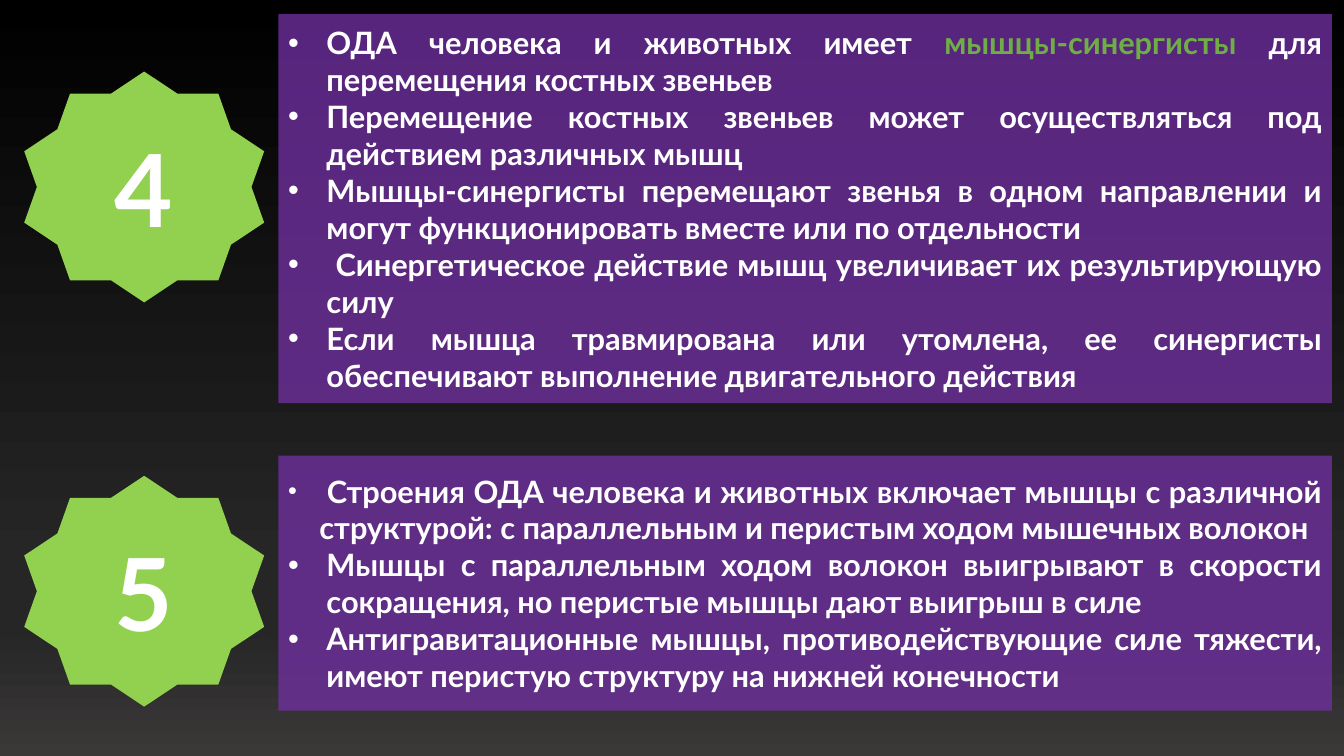
from dataclasses import dataclass

from lxml import etree
from pptx import Presentation
from pptx.dml.color import RGBColor
from pptx.enum import shapes, text
from pptx.oxml.ns import qn
from pptx.util import Inches, Pt


@dataclass(frozen=True)
class Theme:
    font: str = "Lato"
    serif: str = "Times New Roman"
    body: int = 22
    small: int = 18
    big: int = 72
    white: str = "FFFFFF"
    green: str = "70AD47"
    lime: str = "92D050"
    purple: str = "7030A0"
    alpha: int = 78
    stops: tuple = ((0, "000000"), (74, "262626"), (83, "262626"), (100, "3B3838"))


class Deck:
    def __init__(self, theme):
        self.theme = theme
        self.file = Presentation()
        self.file.slide_width = Inches(13.33)
        self.file.slide_height = Inches(7.5)
        self.slide = self.file.slides.add_slide(self.file.slide_layouts[6])

    def backdrop(self):
        fill = self.slide.background.fill
        fill.gradient()
        fill.gradient_angle = 270
        stops = next(self.slide.element.iter(qn("a:gsLst")))
        for stop in list(stops):
            stops.remove(stop)
        for place, color in self.theme.stops:
            stop = etree.SubElement(stops, qn("a:gs"), pos=str(place * 1000))
            etree.SubElement(stop, qn("a:srgbClr"), val=color)

    def shape(self, kind, box, color):
        shape = self.slide.shapes.add_shape(kind, *map(Inches, box))
        shape.shadow.inherit = False
        shape.fill.solid()
        shape.fill.fore_color.rgb = RGBColor.from_string(color)
        shape.line.fill.background()
        shape.text_frame.word_wrap = True
        shape.text_frame.vertical_anchor = text.MSO_ANCHOR.MIDDLE
        return shape

    def run(self, para, words, size, color=None, font=None, bold=True):
        run = para.add_run()
        run.text = words
        run.font.size = Pt(size)
        run.font.name = font or self.theme.font
        run.font.bold = bold
        run.font.color.rgb = RGBColor.from_string(color or self.theme.white)

    def bullet(self, para, indent):
        para.alignment = text.PP_ALIGN.JUSTIFY
        props = para._p.get_or_add_pPr()
        props.set("marL", str(Inches(indent)))
        props.set("indent", str(-Inches(indent)))
        etree.SubElement(props, qn("a:buFont"), typeface="Arial")
        etree.SubElement(props, qn("a:buChar"), char="•")

    def panel(self, top, height, items):
        box = (2.76, top, 10.45, height)
        shape = self.shape(shapes.MSO_SHAPE.FLOWCHART_PROCESS, box, self.theme.purple)
        color = next(shape.element.spPr.iter(qn("a:srgbClr")))
        etree.SubElement(color, qn("a:alpha"), val=str(self.theme.alpha * 1000))
        frame = shape.text_frame
        for i, (indent, runs) in enumerate(items):
            para = frame.add_paragraph() if i else frame.paragraphs[0]
            self.bullet(para, indent)
            for words, style in runs:
                self.run(para, words, **{"size": self.theme.body, **style})

    def star(self, top, digit):
        box = (0.24, top, 2.38, 2.29)
        shape = self.shape(shapes.MSO_SHAPE.STAR_10_POINT, box, self.theme.lime)
        para = shape.text_frame.paragraphs[0]
        para.alignment = text.PP_ALIGN.CENTER
        self.run(para, digit, self.theme.big)


def plain(words):
    return 0.38, [(words, {})]


def main():
    theme = Theme()
    deck = Deck(theme)
    deck.backdrop()
    deck.panel(0.14, 3.86, [
        (0.38, [
            ("ОДА человека и животных имеет ", {}),
            ("мышцы-синергисты", {"color": theme.green}),
            (" для перемещения костных звеньев", {}),
        ]),
        plain("Перемещение костных звеньев может осуществляться под действием различных мышц"),
        plain("Мышцы-синергисты перемещают звенья в одном направлении и могут "
              "функционировать вместе или по отдельности"),
        plain(" Синергетическое действие мышц увеличивает их результирующую силу"),
        plain("Если мышца травмирована или утомлена, ее синергисты обеспечивают "
              "выполнение двигательного действия"),
    ])
    deck.panel(4.52, 2.53, [
        (0.31, [
            (" ", {"size": theme.small, "font": theme.serif, "bold": False}),
            ("Строения ОДА человека и животных включает мышцы с различной структурой: "
             "с параллельным и перистым ходом мышечных волокон", {}),
        ]),
        plain("Мышцы с параллельным ходом волокон выигрывают в скорости сокращения, "
              "но перистые мышцы дают выигрыш в силе"),
        plain("Антигравитационные мышцы, противодействующие силе тяжести, "
              "имеют перистую структуру на нижней конечности"),
    ])
    for top, digit in ((0.71, "4"), (4.72, "5")):
        deck.star(top, digit)
    deck.file.save("out.pptx")


if __name__ == "__main__":
    main()
